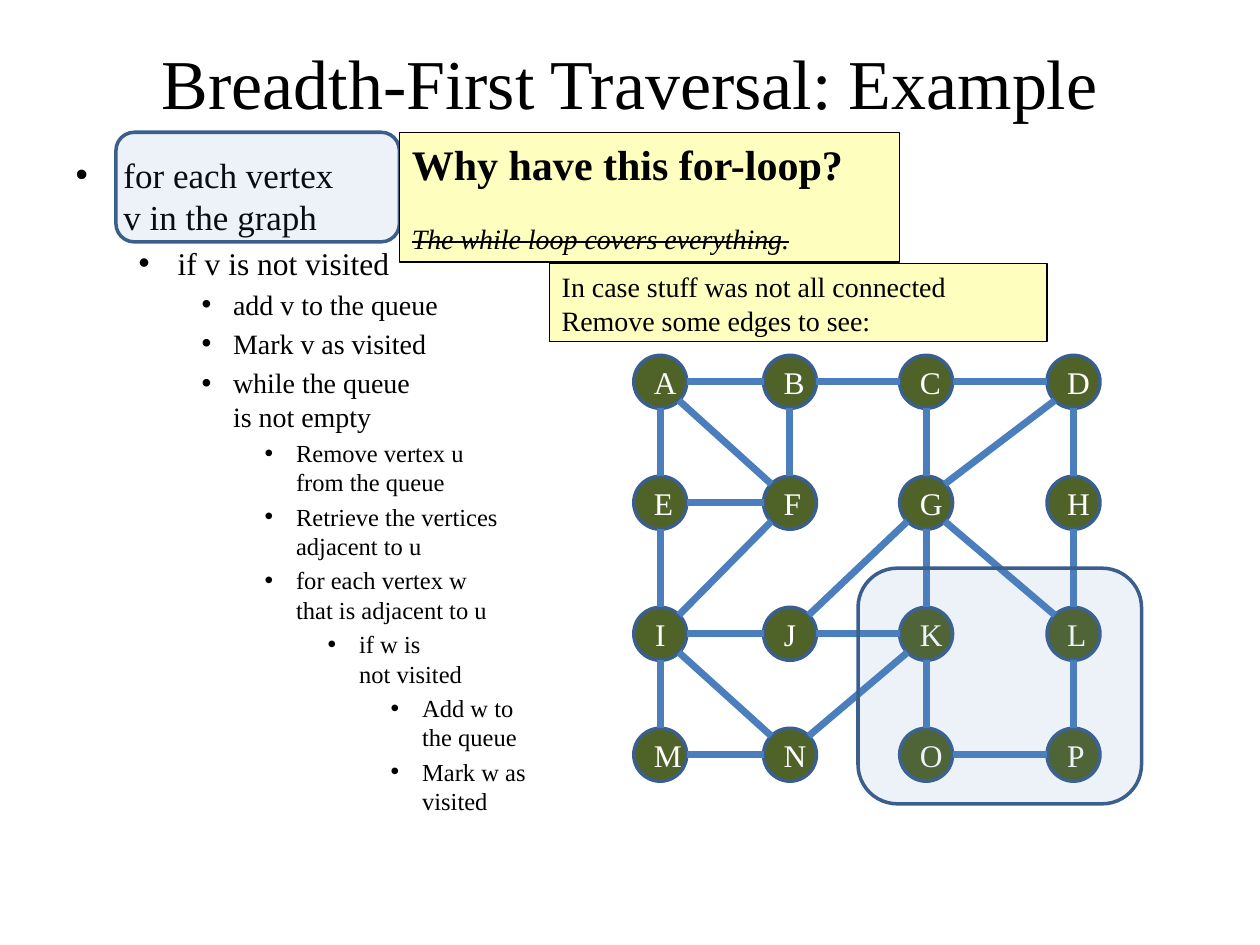
from dataclasses import dataclass
from math import hypot

from lxml import etree
from pptx import Presentation
from pptx.dml.color import RGBColor
from pptx.enum.shapes import MSO_CONNECTOR, MSO_SHAPE
from pptx.enum.text import MSO_ANCHOR, MSO_AUTO_SIZE, PP_ALIGN
from pptx.oxml.ns import qn
from pptx.util import Inches, Pt

RECTANGLE = MSO_SHAPE.RECTANGLE
ROUNDED = MSO_SHAPE.ROUNDED_RECTANGLE
ELLIPSE = MSO_SHAPE.OVAL
STRAIGHT = MSO_CONNECTOR.STRAIGHT
TOP, MIDDLE = MSO_ANCHOR.TOP, MSO_ANCHOR.MIDDLE
LEFT, CENTER = PP_ALIGN.LEFT, PP_ALIGN.CENTER
NO_FIT = MSO_AUTO_SIZE.NONE

GRID_COLUMNS, GRID_ROWS = 100, 75
NODE_SIZE = 4.2
NODE_COLUMNS = (52.4, 62.7, 73.5, 85.2)
NODE_ROWS = (30.3, 39.9, 50.3, 59.9)
VERTICES = "ABCDEFGHIJKLMNOP"
EDGES = (
    "AB AF AE FB CB CD GC HD GD FE IE IF JG KG LG LH "
    "IM IJ IN JK NK OK PL PO NM"
).split()
ALGORITHM = (
    (0, "for each vertex \nv in the graph"),
    (1, "if v is not visited"),
    (2, "add v to the queue"),
    (2, "Mark v as visited"),
    (2, "while the queue \nis not empty"),
    (3, "Remove vertex u \nfrom the queue"),
    (3, "Retrieve the vertices \nadjacent to u"),
    (3, "for each vertex w \nthat is adjacent to u"),
    (4, "if w is \nnot visited"),
    (5, "Add w to \nthe queue"),
    (5, "Mark w as \nvisited"),
)


@dataclass(frozen=True)
class Theme:
    font: str = "Times New Roman"
    ink: str = "000000"
    node_ink: str = "FFFFFF"
    node: str = "4F6228"
    outline: str = "3A5F8C"
    edge: str = "4B7EBC"
    highlight: str = "4F81BD"
    note: str = "FEFEBE"
    title_size: int = 40
    question_size: int = 24
    note_size: int = 16
    node_size: int = 18
    list_sizes: tuple = (20, 18, 16, 14, 14, 14)
    list_margins: tuple = (0.38, 0.81, 1.25, 1.75, 2.25, 2.75)
    list_hangs: tuple = (0.38, 0.31, 0.25, 0.25, 0.25, 0.25)


class GraphSlide:
    """Draws themed elements on one slide laid out on a 100 by 75 grid."""

    def __init__(self, presentation, theme):
        self.theme = theme
        self.unit_x = presentation.slide_width / GRID_COLUMNS
        self.unit_y = presentation.slide_height / GRID_ROWS
        self.slide = presentation.slides.add_slide(presentation.slide_layouts[1])

    def place(self, left, top, width, height):
        return (
            round(left * self.unit_x),
            round(top * self.unit_y),
            round(width * self.unit_x),
            round(height * self.unit_y),
        )

    def move(self, shape, *area):
        shape.left, shape.top, shape.width, shape.height = self.place(*area)

    def style(self, paragraph, size, color=None, bold=False, italic=False):
        font = paragraph.font
        font.name, font.size = self.theme.font, Pt(size)
        font.bold, font.italic = bold, italic
        font.color.rgb = RGBColor.from_string(color or self.theme.ink)

    def title(self, text, *area):
        shape = self.slide.shapes.title
        self.move(shape, *area)
        frame = shape.text_frame
        frame.text, frame.vertical_anchor = text, MIDDLE
        frame.auto_size = NO_FIT
        frame.paragraphs[0].alignment = CENTER
        self.style(frame.paragraphs[0], self.theme.title_size)

    def bullets(self, items, *area):
        shape = self.slide.placeholders[1]
        self.move(shape, *area)
        frame = shape.text_frame
        frame.auto_size = NO_FIT
        for index, (level, text) in enumerate(items):
            paragraph = frame.add_paragraph() if index else frame.paragraphs[0]
            paragraph.text, paragraph.level = text, level
            properties = paragraph._p.get_or_add_pPr()
            properties.set("marL", str(Inches(self.theme.list_margins[level])))
            properties.set("indent", str(-Inches(self.theme.list_hangs[level])))
            etree.SubElement(properties, qn("a:buChar")).set("char", "•")
            self.style(paragraph, self.theme.list_sizes[level])

    def shape(self, kind, fill, line, line_width, *area):
        shape = self.slide.shapes.add_shape(kind, *self.place(*area))
        shape.shadow.inherit = False
        shape.fill.solid()
        shape.fill.fore_color.rgb = RGBColor.from_string(fill)
        shape.line.color.rgb = RGBColor.from_string(line)
        shape.line.width = Pt(line_width)
        return shape

    def highlight(self, *area):
        theme = self.theme
        shape = self.shape(ROUNDED, theme.highlight, theme.outline, 2, *area)
        color = shape._element.spPr.find(qn("a:solidFill")).find(qn("a:srgbClr"))
        etree.SubElement(color, qn("a:alpha")).set("val", "10000")

    def note(self, lines, *area):
        shape = self.shape(RECTANGLE, self.theme.note, self.theme.ink, 0.75, *area)
        frame = shape.text_frame
        frame.text, frame.vertical_anchor = "\n".join(lines), TOP
        for paragraph in frame.paragraphs:
            paragraph.alignment = LEFT
            self.style(paragraph, self.theme.note_size)
        return frame.paragraphs

    def question(self, heading, rejected, *area):
        first, second = self.note((heading, rejected), *area)
        self.style(first, self.theme.question_size, bold=True)
        self.style(second, self.theme.note_size, italic=True)
        second.space_before = Pt(18.4)
        second.runs[0]._r.get_or_add_rPr().set("strike", "sngStrike")

    def node(self, letter, center):
        theme, (x, y) = self.theme, center
        corner = x - NODE_SIZE / 2, y - NODE_SIZE / 2
        shape = self.shape(
            ELLIPSE, theme.node, theme.outline, 2, *corner, NODE_SIZE, NODE_SIZE
        )
        frame = shape.text_frame
        frame.text, frame.vertical_anchor = letter, MIDDLE
        frame.paragraphs[0].alignment = CENTER
        self.style(frame.paragraphs[0], theme.node_size, theme.node_ink)

    def edge(self, start, end):
        step_x, step_y = ((b > a) - (b < a) for a, b in zip(start, end))
        reach = NODE_SIZE / 2 / hypot(step_x, step_y)
        begin = self.place(start[0] + step_x * reach, start[1] + step_y * reach, 0, 0)
        finish = self.place(end[0] - step_x * reach, end[1] - step_y * reach, 0, 0)
        line = self.slide.shapes.add_connector(STRAIGHT, *begin[:2], *finish[:2])
        line.line.color.rgb = RGBColor.from_string(self.theme.edge)
        line.line.width = Pt(4)
        etree.SubElement(line._element.spPr, qn("a:effectLst"))


def main():
    presentation = Presentation()
    presentation.slide_width, presentation.slide_height = Inches(10), Inches(7.5)
    page = GraphSlide(presentation, Theme())
    page.title("Breadth-First Traversal: Example", 5, 3, 90, 7)
    page.bullets(ALGORITHM, 5, 11.7, 45, 58.3)
    page.highlight(9.2, 10.5, 22.5, 8.7)
    page.question(
        "Why have this for-loop?",
        "The while loop covers everything.",
        31.7, 10.5, 39.7, 10.3,
    )
    centers = dict(zip(VERTICES, ((x, y) for y in NODE_ROWS for x in NODE_COLUMNS)))
    for letter, center in centers.items():
        page.node(letter, center)
    for start, end in EDGES:
        page.edge(centers[start], centers[end])
    page.note(
        ("In case stuff was not all connected", "Remove some edges to see:"),
        43.6, 20.9, 39.5, 6.2,
    )
    page.highlight(68.1, 45.1, 22.5, 18.7)
    presentation.save("out.pptx")


if __name__ == "__main__":
    main()
